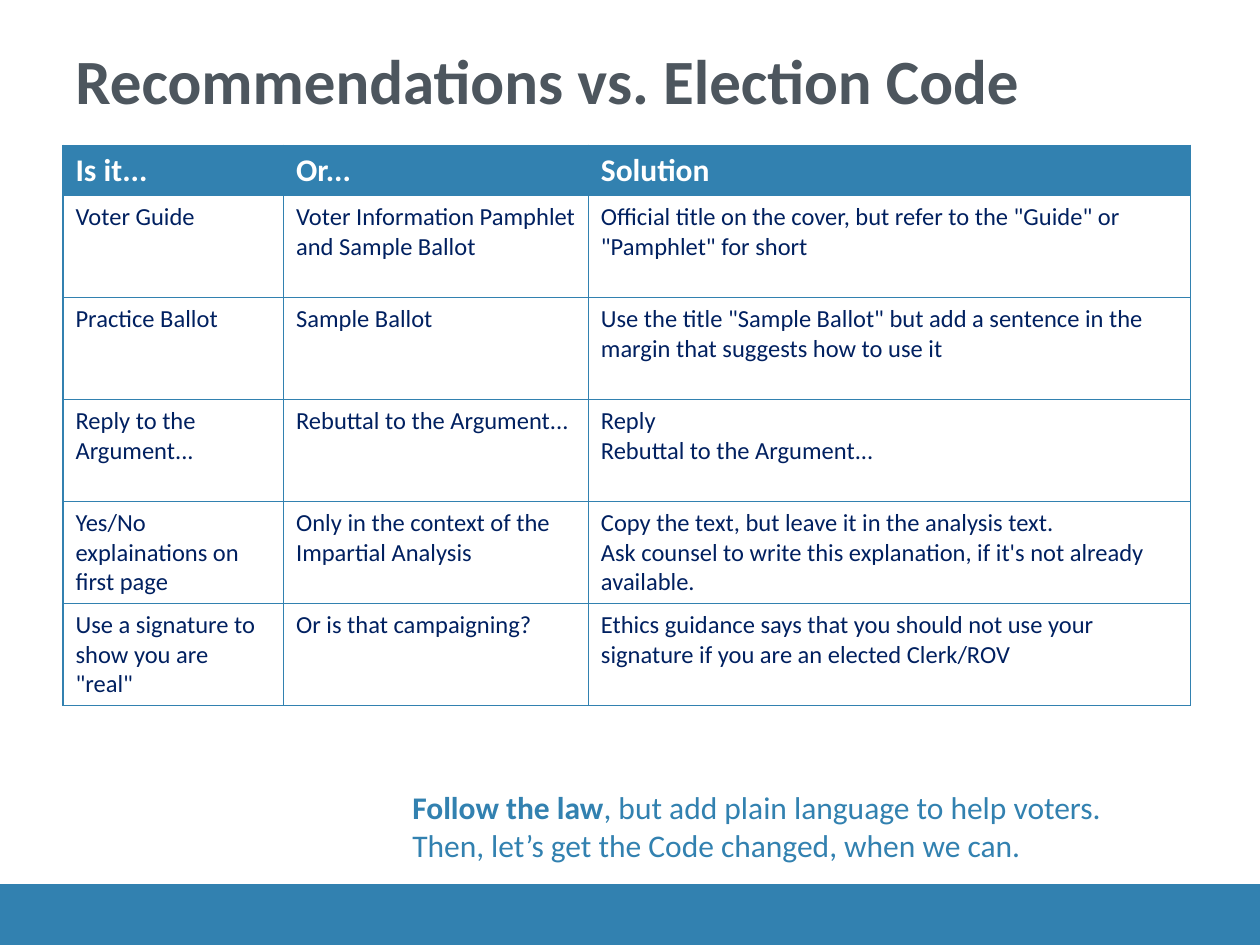
from lxml.etree import SubElement
from pptx import Presentation
from pptx.dml.color import RGBColor
from pptx.enum.shapes import MSO_SHAPE as Shape
from pptx.oxml.ns import qn
from pptx.util import Pt

BLUE = RGBColor(0x32, 0x81, 0xB0)
SLATE = RGBColor(0x4D, 0x56, 0x5E)
NAVY = RGBColor(0x00, 0x20, 0x60)
WHITE = RGBColor(0xFF, 0xFF, 0xFF)


class Deck:
    """Holds the style and the current slide."""
    font = "Calibri"

    def __init__(self, prs):
        self.s = prs.slides.add_slide(prs.slide_layouts[6])

    def add_runs(self, tf, paragraphs, size, color):
        """Each paragraph is a list of (text, bold) runs."""
        tf.word_wrap = True
        for i, runs in enumerate(paragraphs):
            p = tf.add_paragraph() if i else tf.paragraphs[0]
            for text, bold in runs:
                r = p.add_run()
                r.text = text
                r.font.name = self.font
                r.font.size = Pt(size)
                r.font.bold = bold
                r.font.color.rgb = color

    def bar(self, x, y, w, h, color):
        sp = self.s.shapes.add_shape(Shape.RECTANGLE, Pt(x), Pt(y), Pt(w), Pt(h))
        sp.shadow.inherit = False
        sp.fill.solid()
        sp.fill.fore_color.rgb = color
        sp.line.color.rgb = color
        sp.line.width = Pt(0.75)

    def text(self, x, y, w, h, paragraphs, size, color, top=3.6):
        tf = self.s.shapes.add_textbox(Pt(x), Pt(y), Pt(w), Pt(h)).text_frame
        tf.margin_top = Pt(top)
        self.add_runs(tf, paragraphs, size, color)

    def borders(self, cell, color):
        tc_pr = cell._tc.get_or_add_tcPr()
        for i, side in enumerate(("lnL", "lnR", "lnT", "lnB")):
            ln = tc_pr.makeelement(qn(f"a:{side}"), {"w": str(Pt(1))})
            fill = SubElement(ln, qn("a:solidFill"))
            SubElement(fill, qn("a:srgbClr"), val=str(color))
            tc_pr.insert(i, ln)

    def table(self, x, y, widths, heights, rows):
        table = self.s.shapes.add_table(
            len(rows), len(widths), Pt(x), Pt(y),
            Pt(sum(widths)), Pt(sum(heights))).table
        table.horz_banding = False
        for column, width in zip(table.columns, widths):
            column.width = Pt(width)
        for i, (row, height) in enumerate(zip(rows, heights)):
            table.rows[i].height = Pt(height)
            header = i == 0
            for j, text in enumerate(row):
                cell = table.cell(i, j)
                cell.fill.solid()
                cell.fill.fore_color.rgb = BLUE if header else WHITE
                self.borders(cell, BLUE)
                lines = [[(line, header)] for line in text.split("\n")]
                self.add_runs(cell.text_frame, lines, 18 if header else 14,
                              WHITE if header else NAVY)


ROWS = [
    ("Is it...", "Or...", "Solution"),
    ("Voter Guide", "Voter Information Pamphlet and Sample Ballot",
     'Official title on the cover, but refer to the "Guide" or "Pamphlet" for short'),
    ("Practice Ballot", "Sample Ballot",
     'Use the title "Sample Ballot" but add a sentence in the margin '
     "that suggests how to use it"),
    ("Reply to the Argument...", "Rebuttal to the Argument...",
     "Reply\nRebuttal to the Argument..."),
    ("Yes/No explainations on first page",
     "Only in the context of the Impartial Analysis",
     "Copy the text, but leave it in the analysis text.\n"
     "Ask counsel to write this explanation, if it's not already available."),
    ('Use a signature to show you are "real"', "Or is that campaigning?",
     "Ethics guidance says that you should not use your signature "
     "if you are an elected Clerk/ROV"),
]


def main():
    prs = Presentation()
    prs.slide_width, prs.slide_height = Pt(720), Pt(540)
    deck = Deck(prs)

    # Footer band
    deck.bar(0, 505.5, 720, 36, BLUE)

    # Title
    deck.text(36, 21.6, 648, 90,
              [[("Recommendations vs. Election Code", True)]], 36, SLATE, top=2)

    # Comparison table
    deck.table(36, 83, (126, 174.2, 344.2), [28.8] + [58.3] * 5, ROWS)

    # Takeaway
    deck.text(228.5, 447, 456, 51,
              [[("Follow the law", True),
                (", but add plain language to help voters.", False)],
               [("Then, let’s get the Code changed, when we can.", False)]],
              18, BLUE)

    prs.save("out.pptx")


if __name__ == "__main__":
    main()
